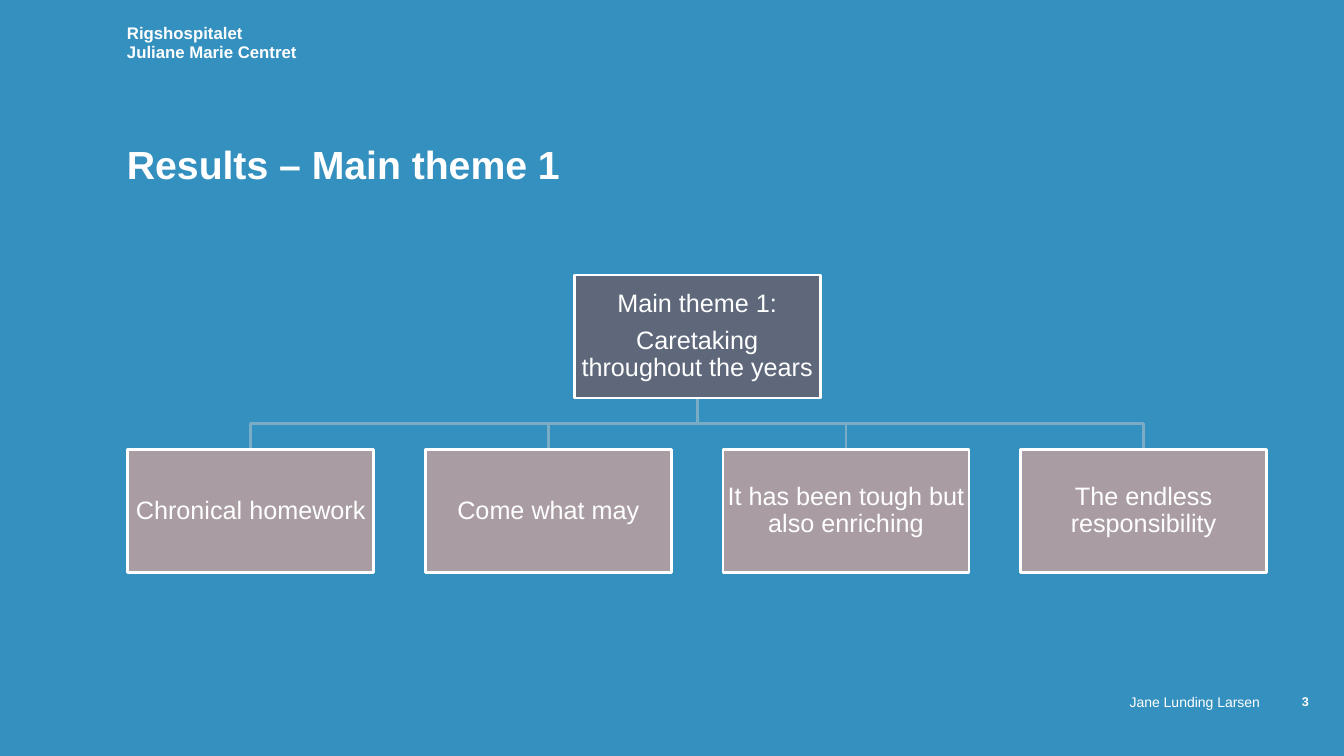
import pptx
import pptx.util
import pptx.dml.color
import pptx.enum.shapes
import pptx.enum.text

Cm = pptx.util.Cm
Pt = pptx.util.Pt
Align = pptx.enum.text.PP_ALIGN
Anchor = pptx.enum.text.MSO_ANCHOR

COLOURS = {
    "background": "3490BE",
    "text": "FFFFFF",
    "border": "FFFFFF",
    "branch": "7BACC5",
    "theme": "5F687B",
    "subtheme": "A99DA3",
}
SUBTHEMES = [
    "Chronical homework",
    "Come what may",
    "It has been tough but also enriching",
    "The endless responsibility",
]
BOX_WIDTH, BOX_HEIGHT = 6.2, 3.1
FIRST_LEFT, PITCH = 3.22, 7.5
THEME_LEFT = FIRST_LEFT + PITCH * (len(SUBTHEMES) - 1) / 2
THEME_TOP, LEVEL_GAP = 6.93, 1.3
SUBTHEME_TOP = THEME_TOP + BOX_HEIGHT + LEVEL_GAP


def colour(name):
    """Return the named colour."""
    return pptx.dml.color.RGBColor.from_string(COLOURS[name])


def write(shape, lines, size, bold=False, align=Align.LEFT, anchor=Anchor.TOP,
          inset=0, line_spacing=1.0, gap=0):
    """Fill a shape with one paragraph per line, with a gap between them."""
    frame = shape.text_frame
    frame.word_wrap = True
    frame.vertical_anchor = anchor
    frame.margin_left = frame.margin_right = Cm(inset)
    frame.margin_top = frame.margin_bottom = Cm(inset)
    for index, line in enumerate(lines):
        para = frame.add_paragraph() if index else frame.paragraphs[0]
        para.alignment = align
        para.line_spacing = line_spacing
        if index < len(lines) - 1:
            para.space_after = Pt(gap)
        span = para.add_run()
        span.text = line
        span.font.name = "Arial"
        span.font.size = Pt(size)
        span.font.bold = bold
        span.font.color.rgb = colour("text")


def add_label(page, left, top, width, height, text, size, **style):
    """Add a text box with a single line."""
    box = page.shapes.add_textbox(Cm(left), Cm(top), Cm(width), Cm(height))
    write(box, [text], size, **style)


def add_box(page, left, top, lines, fill):
    """Add one box of the theme tree."""
    box = page.shapes.add_shape(
        pptx.enum.shapes.MSO_SHAPE.RECTANGLE,
        Cm(left), Cm(top), Cm(BOX_WIDTH), Cm(BOX_HEIGHT))
    box.shadow.inherit = False
    box.fill.solid()
    box.fill.fore_color.rgb = colour(fill)
    box.line.color.rgb = colour("border")
    box.line.width = Pt(2)
    write(box, lines, 18, align=Align.CENTER, anchor=Anchor.MIDDLE,
          inset=0.03, line_spacing=0.9, gap=7)


def add_branch(page, subtheme_left):
    """Draw the bent line from the theme down to one subtheme."""
    start = Cm(THEME_LEFT + BOX_WIDTH / 2)
    end = Cm(subtheme_left + BOX_WIDTH / 2)
    top, bottom = Cm(THEME_TOP + BOX_HEIGHT), Cm(SUBTHEME_TOP)
    middle = (top + bottom) // 2
    builder = page.shapes.build_freeform(start, top)
    builder.add_line_segments(
        [(start, middle), (end, middle), (end, bottom)], close=False)
    branch = builder.convert_to_shape()
    branch.shadow.inherit = False
    branch.fill.background()
    branch.line.color.rgb = colour("branch")
    branch.line.width = Pt(2)


def main():
    """Build the slide and save it."""
    deck = pptx.Presentation()
    deck.slide_width, deck.slide_height = Cm(33.87), Cm(19.05)
    page = deck.slides.add_slide(deck.slide_layouts[6])
    page.background.fill.solid()
    page.background.fill.fore_color.rgb = colour("background")

    add_label(page, 3.2, 0.58, 17, 0.6, "Rigshospitalet", 12, bold=True)
    add_label(page, 3.2, 1.04, 17, 1.17, "Juliane Marie Centret", 12, bold=True)
    add_label(page, 3.2, 2.41, 28.73, 2.31, "Results – Main theme 1", 28,
              bold=True, anchor=Anchor.BOTTOM, line_spacing=0.85)
    add_label(page, 22.35, 17.48, 9.4, 0.5, "Jane Lunding Larsen", 10,
              align=Align.RIGHT)
    add_label(page, 31.95, 17.48, 1.9, 0.5, "3", 9, bold=True,
              align=Align.CENTER)

    lefts = [FIRST_LEFT + PITCH * index for index in range(len(SUBTHEMES))]
    for left in reversed(lefts):
        add_branch(page, left)
    add_box(page, THEME_LEFT, THEME_TOP,
            ["Main theme 1:", "Caretaking throughout the years"], "theme")
    for left, subtheme in zip(lefts, SUBTHEMES):
        add_box(page, left, SUBTHEME_TOP, [subtheme], "subtheme")

    deck.save("out.pptx")


if __name__ == "__main__":
    main()
